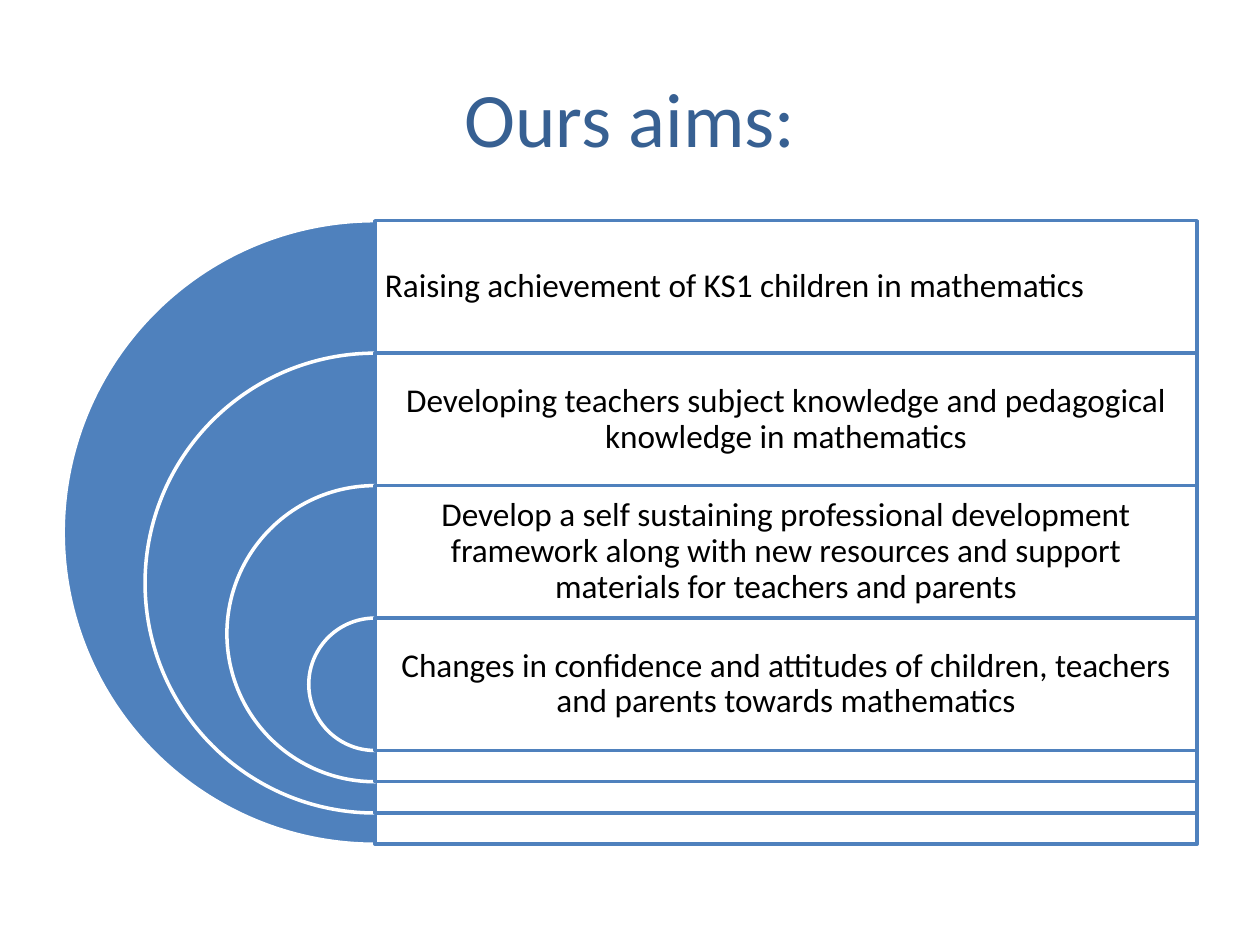
import dataclasses

import lxml.etree
import pptx
import pptx.dml.color
import pptx.enum.shapes
import pptx.enum.text
import pptx.oxml.ns
import pptx.util

Cm = pptx.util.Cm
Pt = pptx.util.Pt
Color = pptx.dml.color.RGBColor.from_string
Shape = pptx.enum.shapes.MSO_SHAPE
Align = pptx.enum.text.PP_ALIGN
Anchor = pptx.enum.text.MSO_ANCHOR


@dataclasses.dataclass(frozen=True)
class Theme:
    font: str = "Calibri"
    title_color: str = "376092"
    accent: str = "4F81BD"
    paper: str = "FFFFFF"
    ink: str = "000000"
    title_size: int = 44
    aim_size: int = 19
    line_width: int = 2
    panel_opacity: int = 90


theme = Theme()


def add_outlined(page, kind, left, top, width, height, fill, line):
    shape = page.shapes.add_shape(kind, Cm(left), Cm(top), Cm(width), Cm(height))
    shape.shadow.inherit = False
    shape.fill.solid()
    shape.fill.fore_color.rgb = Color(fill)
    shape.line.color.rgb = Color(line)
    shape.line.width = Pt(theme.line_width)
    return shape


def style_text(frame, size, color, alignment):
    frame.word_wrap = True
    frame.vertical_anchor = Anchor.MIDDLE
    paragraph = frame.paragraphs[0]
    paragraph.alignment = alignment
    paragraph.font.name = theme.font
    paragraph.font.size = Pt(size)
    paragraph.font.color.rgb = Color(color)
    return paragraph


deck = pptx.Presentation()
deck.slide_width = Cm(25.4)
deck.slide_height = Cm(19.05)
page = deck.slides.add_slide(deck.slide_layouts[5])

title = page.shapes.title
title.left, title.top, title.width, title.height = Cm(1.27), Cm(0.76), Cm(22.86), Cm(3.18)
title.text_frame.text = "Ours aims:"
style_text(title.text_frame, theme.title_size, theme.title_color, Align.CENTER)

aims = [
    ("Raising achievement of KS1 children in mathematics", Align.LEFT),
    ("Developing teachers subject knowledge and pedagogical knowledge in mathematics", Align.CENTER),
    ("Develop a self sustaining professional development framework along with "
     "new resources and support materials for teachers and parents", Align.CENTER),
    ("Changes in confidence and attitudes of children, teachers and parents "
     "towards mathematics", Align.CENTER),
]

center_x = 7.56
first_top = 4.45
row_height = 2.67
panel_width = 16.57
outer_diameter = 12.57
diameter_step = 3.3

for index, (aim, alignment) in enumerate(aims):
    top = first_top + index * row_height
    diameter = outer_diameter - index * diameter_step

    arc = add_outlined(page, Shape.PIE, center_x - diameter / 2, top, diameter, diameter,
                       theme.accent, theme.paper)
    arc.adjustments[0] = 54
    arc.adjustments[1] = 162

    panel = add_outlined(page, Shape.RECTANGLE, center_x, top, panel_width, diameter,
                         theme.paper, theme.accent)
    fill_color = panel.fill._xPr.find(".//" + pptx.oxml.ns.qn("a:srgbClr"))
    alpha = lxml.etree.SubElement(fill_color, pptx.oxml.ns.qn("a:alpha"))
    alpha.set("val", str(theme.panel_opacity * 1000))

    box = page.shapes.add_textbox(Cm(center_x), Cm(top), Cm(panel_width), Cm(row_height))
    frame = box.text_frame
    frame.margin_left = frame.margin_right = Cm(0.2)
    frame.margin_top = frame.margin_bottom = Cm(0.2)
    frame.text = aim
    para = style_text(frame, theme.aim_size, theme.ink, alignment)
    para.line_spacing = 0.9

deck.save("out.pptx")
